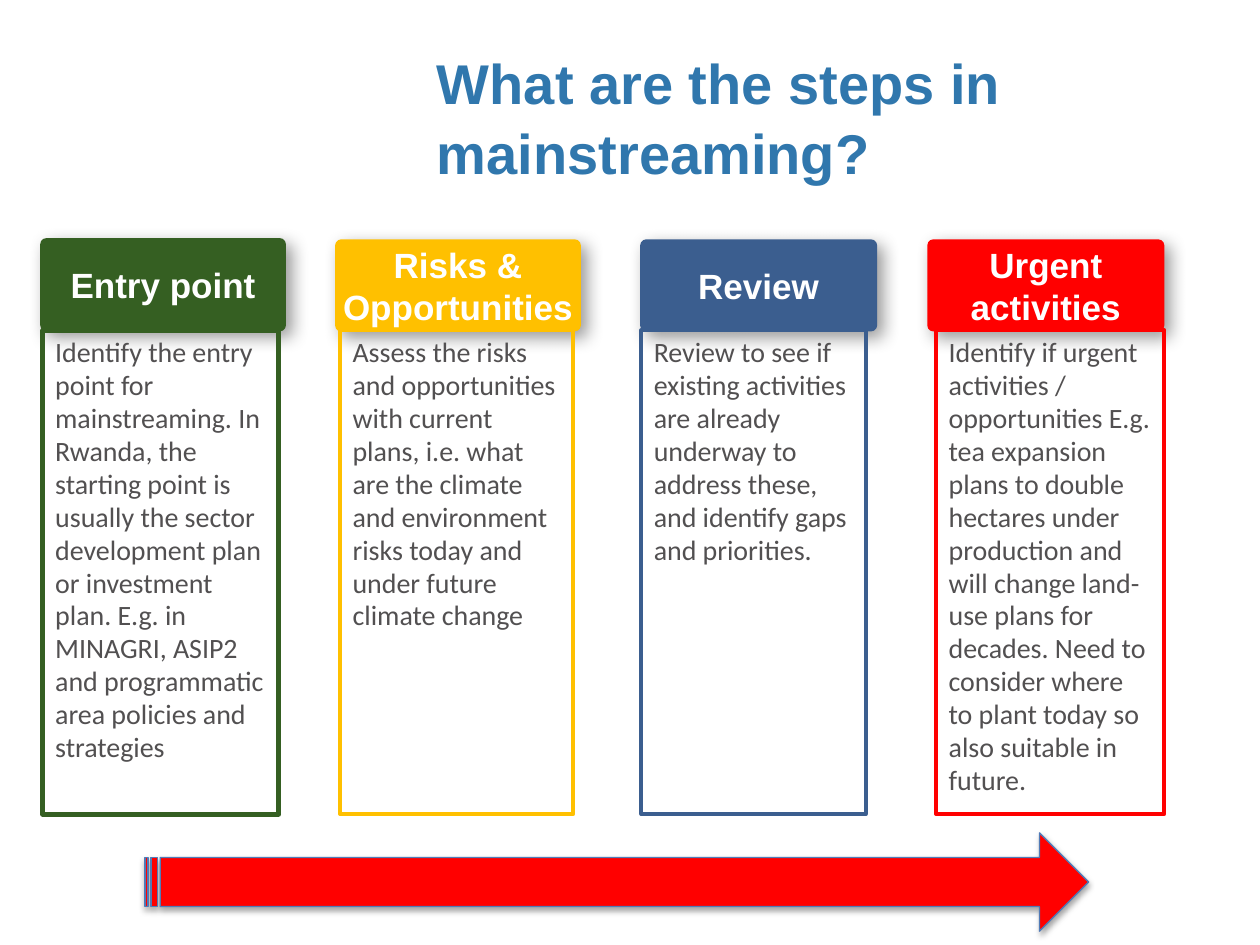
from lxml import etree
from pptx import Presentation
from pptx.dml.color import RGBColor
from pptx.enum import shapes, text
from pptx.oxml import ns
from pptx.util import Pt

BLUE_TITLE = RGBColor(0x30, 0x77, 0xAD)
GREY = RGBColor(0x52, 0x50, 0x51)
WHITE = RGBColor(0xFF, 0xFF, 0xFF)
GREEN = RGBColor(0x35, 0x5F, 0x22)
AMBER = RGBColor(0xFF, 0xC0, 0x00)
NAVY = RGBColor(0x3B, 0x5E, 0x8F)
RED = RGBColor(0xFF, 0x00, 0x00)
ARROW_EDGE = RGBColor(0x51, 0x7B, 0xB7)

# Heading, body, colour, header (left, top, width, height), body (left, width), line width
STEPS = [
    ("Entry point",
     "Identify the entry point for mainstreaming. In Rwanda, the starting point is "
     "usually the sector development plan or investment plan. E.g. in MINAGRI, ASIP2 "
     "and programmatic area policies and strategies",
     GREEN, (23, 136.1, 140.4, 53.3), (24.5, 134.6), 3),
    ("Risks & Opportunities",
     "Assess the risks and opportunities with current plans, i.e. what are the climate "
     "and environment risks today and under future climate change",
     AMBER, (191.5, 136.8, 140.4, 52.6), (194.4, 133.2), 2.25),
    ("Review",
     "Review to see if existing activities are already underway to address these, "
     "and identify gaps and priorities.",
     NAVY, (365.8, 136.8, 135.4, 52.6), (366.5, 128.2), 2.25),
    ("Urgent activities",
     "Identify if urgent activities / opportunities E.g. tea expansion plans to double "
     "hectares under production and will change land-use plans for decades. Need to "
     "consider where to plant today so also suitable in future.",
     RED, (529.9, 136.8, 135.4, 52.6), (535, 130.3), 2.25),
]
BODY_TOP, BODY_HEIGHT = 188.8, 276.5


def add_shadow(shape, opacity, blur, distance, angle):
    """Give the shape a soft black outer shadow."""
    shape.shadow.inherit = False
    effects = shape._element.spPr.find(ns.qn("a:effectLst"))
    outer = etree.SubElement(
        effects, ns.qn("a:outerShdw"), blurRad=str(int(Pt(blur))),
        dist=str(int(Pt(distance))), dir=str(angle * 60000),
        algn="ctr", rotWithShape="0")
    color = etree.SubElement(outer, ns.qn("a:srgbClr"), val="000000")
    etree.SubElement(color, ns.qn("a:alpha"), val=str(opacity * 1000))


def add_box(page, kind, box):
    shape = page.shapes.add_shape(kind, *(Pt(value) for value in box))
    shape.shadow.inherit = False
    return shape


def write(frame, words, font_name, size, color, bold, align, spacing=None):
    frame.word_wrap = True
    para = frame.paragraphs[0]
    para.text = words
    para.alignment = align
    para.line_spacing = spacing
    font = para.font
    font.name, font.size, font.bold = font_name, Pt(size), bold
    font.color.rgb = color


def add_title(page, box):
    frame = page.shapes.add_textbox(*(Pt(value) for value in box)).text_frame
    frame.margin_top = Pt(40)
    write(frame, "What are the steps in mainstreaming?", "Arial", 32,
          BLUE_TITLE, True, text.PP_ALIGN.LEFT, 1.05)


def add_header(page, box, heading, color):
    header = add_box(page, shapes.MSO_SHAPE.ROUNDED_RECTANGLE, box)
    header.adjustments[0] = 0.065
    header.fill.solid()
    header.fill.fore_color.rgb = color
    header.line.fill.background()
    add_shadow(header, 40, 10, 5, 45)
    frame = header.text_frame
    frame.margin_left = frame.margin_right = Pt(0)
    frame.margin_top = frame.margin_bottom = Pt(0)
    frame.vertical_anchor = text.MSO_ANCHOR.MIDDLE
    write(frame, heading, "Arial", 20, WHITE, True, text.PP_ALIGN.CENTER)


def add_body(page, box, words, color, line_width):
    body = add_box(page, shapes.MSO_SHAPE.RECTANGLE, box)
    body.fill.background()
    body.line.color.rgb = color
    body.line.width = Pt(line_width)
    body.text_frame.vertical_anchor = text.MSO_ANCHOR.TOP
    write(body.text_frame, words, "Calibri", 16, GREY, False,
          text.PP_ALIGN.LEFT, 0.98)


def add_arrow(page, box):
    arrow = add_box(page, shapes.MSO_SHAPE.STRIPED_RIGHT_ARROW, box)
    arrow.fill.solid()
    arrow.fill.fore_color.rgb = RED
    arrow.line.color.rgb = ARROW_EDGE
    arrow.line.width = Pt(0.75)
    add_shadow(arrow, 35, 3.1, 1.8, 90)


def main():
    deck = Presentation()
    deck.slide_width, deck.slide_height = Pt(720), Pt(540)
    page = deck.slides.add_slide(deck.slide_layouts[6])

    add_title(page, (242.6, -14.4, 491, 108.7))

    # One column per step
    for heading, words, color, header_box, (left, width), line_width in STEPS:
        add_header(page, header_box, heading, color)
        add_body(page, (left, BODY_TOP, width, BODY_HEIGHT), words, color, line_width)

    # Direction of the process
    add_arrow(page, (82.8, 475.9, 539.3, 56.2))

    deck.save("out.pptx")


if __name__ == "__main__":
    main()
